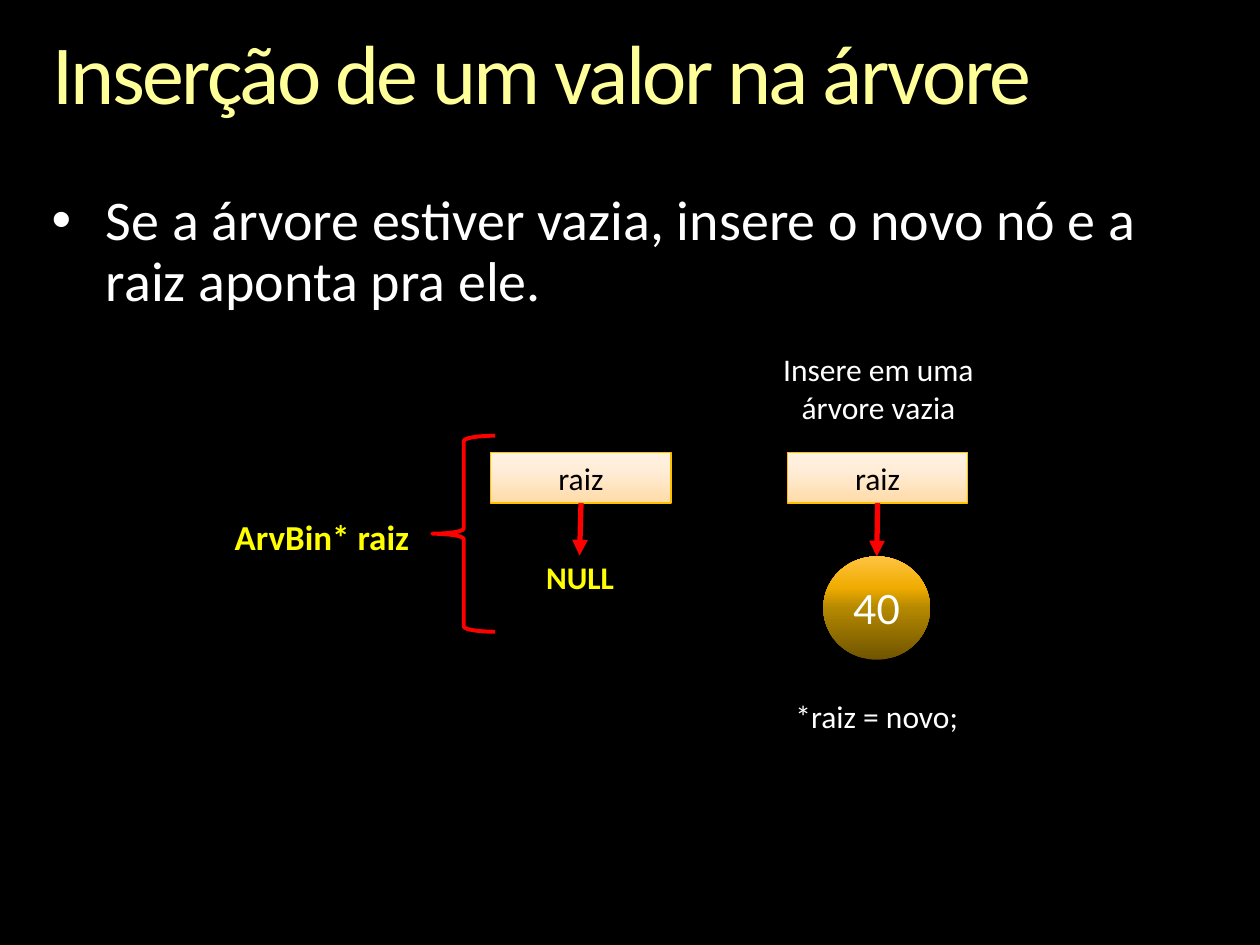
from lxml.etree import SubElement
from pptx import Presentation
from pptx.dml.color import RGBColor
from pptx.enum.shapes import MSO_CONNECTOR, MSO_SHAPE
from pptx.enum.text import MSO_ANCHOR, PP_ALIGN
from pptx.oxml import parse_xml
from pptx.oxml.ns import nsdecls, qn
from pptx.util import Pt

WHITE, BLACK, RED, YELLOW = "FFFFFF", "000000", "FF0000", "FFFF00"
CREAM = [(0, "FFDBA7"), (65, "FFEDD8"), (100, "FFF2E4")]
GOLD = [(0, "705400"), (50, "B48800"), (70, "F0AC00"), (100, "FFC342")]
ROOT_WIDTH, ROOT_HEIGHT, ROOT_TOP = 103, 29, 258.5


def color(hex_text):
    return RGBColor.from_string(hex_text)


def write(shape, text, size, hex_color, bold=False, font="Calibri", centered=True):
    shape.text_frame.word_wrap = True
    shape.text_frame.text = text
    paragraph = shape.text_frame.paragraphs[0]
    paragraph.alignment = PP_ALIGN.CENTER if centered else PP_ALIGN.LEFT
    run_font = paragraph.runs[0].font
    run_font.name, run_font.size, run_font.bold = font, Pt(size), bold
    run_font.color.rgb = color(hex_color)
    return paragraph


def add_label(slide, box, text, size=18, hex_color=WHITE, bold=False):
    label = slide.shapes.add_textbox(*map(Pt, box))
    write(label, text, size, hex_color, bold)


def add_heading(slide, box, text, size, hex_color):
    """Left-aligned text without margins, with tight lines."""
    heading = slide.shapes.add_textbox(*map(Pt, box))
    frame = heading.text_frame
    frame.margin_left = frame.margin_right = frame.margin_top = frame.margin_bottom = 0
    paragraph = write(heading, text, size, hex_color, centered=False)
    paragraph.line_spacing = 0.9
    return paragraph


def add_bullet(paragraph, indent):
    properties = paragraph._p.get_or_add_pPr()
    properties.set("marL", str(Pt(indent)))
    properties.set("indent", str(Pt(-indent)))
    SubElement(properties, qn("a:buFont"), typeface="Arial")
    SubElement(properties, qn("a:buChar"), char="•")


def fill_upward(shape, stops):
    """Fill with a gradient that runs from bottom to top."""
    stop_xml = "".join(
        f'<a:gs pos="{position * 1000}"><a:srgbClr val="{hex_color}"/></a:gs>'
        for position, hex_color in stops
    )
    gradient = parse_xml(
        f'<a:gradFill {nsdecls("a")} rotWithShape="1"><a:gsLst>{stop_xml}</a:gsLst>'
        '<a:lin ang="16200000" scaled="0"/></a:gradFill>'
    )
    shape._element.spPr.find(qn("a:prstGeom")).addnext(gradient)


def add_node(slide, kind, box, stops, outline=None):
    node = slide.shapes.add_shape(kind, *map(Pt, box))
    node.shadow.inherit = False
    fill_upward(node, stops)
    if outline:
        node.line.color.rgb = color(outline)
        node.line.width = Pt(0.75)
    else:
        node.line.fill.background()
    node.text_frame.vertical_anchor = MSO_ANCHOR.MIDDLE
    return node


def add_root(slide, left):
    box = (left, ROOT_TOP, ROOT_WIDTH, ROOT_HEIGHT)
    root = add_node(slide, MSO_SHAPE.RECTANGLE, box, CREAM, "FFC000")
    write(root, "raiz", 18, BLACK)
    return root


def add_arrow(slide, root, end_x, end_y):
    """Red arrow from the bottom of a root box to a point."""
    arrow = slide.shapes.add_connector(
        MSO_CONNECTOR.STRAIGHT, root.left, root.top, Pt(end_x), Pt(end_y)
    )
    arrow.begin_connect(root, 2)
    arrow.line.color.rgb = color(RED)
    arrow.line.width = Pt(3)
    SubElement(arrow.line._get_or_add_ln(), qn("a:tailEnd"), type="triangle")
    SubElement(arrow._element.spPr, qn("a:effectLst"))
    return arrow


def add_brace(slide, box):
    brace = slide.shapes.add_shape(MSO_SHAPE.LEFT_BRACE, *map(Pt, box))
    brace.shadow.inherit = False
    brace.fill.background()
    brace.line.color.rgb = color(RED)
    brace.line.width = Pt(2.25)


def add_empty_tree(slide):
    root = add_root(slide, 280.5)
    add_arrow(slide, root, 331.2, 317.5)
    add_label(slide, (303.5, 315.5, 56, 29), "NULL", 18, YELLOW, bold=True)
    add_brace(slide, (247, 249, 36, 112))
    add_label(slide, (121.5, 291, 125, 32), "ArvBin* raiz", 20, YELLOW, bold=True)


def add_tree_with_node(slide):
    root = add_root(slide, 450)
    node = add_node(slide, MSO_SHAPE.OVAL, (470.5, 318, 61, 59), GOLD)
    write(node, "40", 23, WHITE, font="Lato")
    arrow = add_arrow(slide, root, 501, 318)
    arrow.end_connect(node, 0)
    add_label(slide, (423, 196.5, 158, 51), "Insere em uma árvore vazia")
    add_label(slide, (422, 394.5, 158, 29), "*raiz = novo;")


def main():
    presentation = Presentation()
    presentation.slide_width, presentation.slide_height = Pt(720), Pt(540)
    slide = presentation.slides.add_slide(presentation.slide_layouts[6])
    slide.background.fill.solid()
    slide.background.fill.fore_color.rgb = color(BLACK)

    title = add_heading(
        slide, (30, 18, 660, 52.5), "Inserção de um valor na árvore", 48, "FFFF99"
    )
    title.runs[0].font._element.set("spc", "-150")
    statement = add_heading(
        slide,
        (29.5, 110, 660, 70),
        "Se a árvore estiver vazia, insere o novo nó e a raiz aponta pra ele.",
        32,
        WHITE,
    )
    add_bullet(statement, 31)
    add_empty_tree(slide)
    add_tree_with_node(slide)
    presentation.save("out.pptx")


if __name__ == "__main__":
    main()
